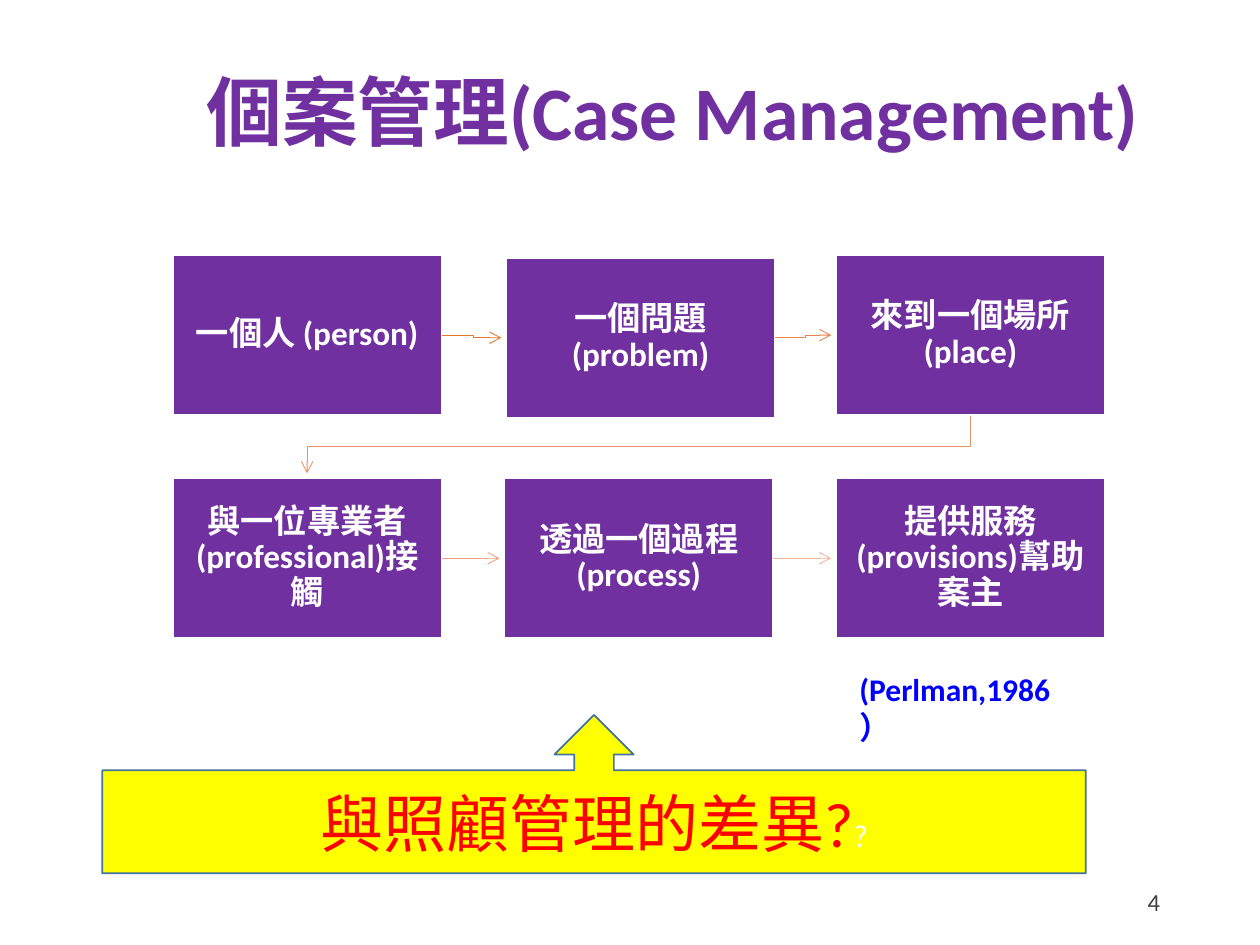
"""Build the case management slide with its six-step flow."""
import pptx
import pptx.dml.color
import pptx.enum.shapes
import pptx.enum.text
import pptx.oxml
import pptx.oxml.ns
import pptx.util

Pt = pptx.util.Pt
Shape = pptx.enum.shapes.MSO_SHAPE
Align = pptx.enum.text.PP_ALIGN
Anchor = pptx.enum.text.MSO_ANCHOR
PURPLE, WHITE = "7030A0", "FFFFFF"
BOX_WIDTH, BOX_HEIGHT, ARROW_GAP = 154, 92, 2.5


def color(hex_text):
    return pptx.dml.color.RGBColor.from_string(hex_text)


def write(shape, text, size=18, hex_color=WHITE, bold=False, align=Align.LEFT,
          anchor=Anchor.TOP, spacing=None, margin=None):
    frame = shape.text_frame
    frame.word_wrap = True
    frame.vertical_anchor = anchor
    if margin is not None:
        frame.margin_left = frame.margin_right = Pt(margin)
        frame.margin_top = frame.margin_bottom = Pt(margin)
    paragraph = frame.paragraphs[0]
    paragraph.alignment = align
    if spacing:
        paragraph.line_spacing = spacing
    run = paragraph.add_run()
    run.text = text
    run.font.name = "Calibri"
    run.font.size = Pt(size)
    run.font.bold = bold
    run.font.color.rgb = color(hex_color)


class SlideBuilder:
    def __init__(self):
        self.presentation = pptx.Presentation()
        self.presentation.slide_width = Pt(720)
        self.presentation.slide_height = Pt(540)
        layout = self.presentation.slide_layouts[6]
        self.slide = self.presentation.slides.add_slide(layout)

    def text(self, text, left, top, width, height, **style):
        shape = self.slide.shapes.add_textbox(Pt(left), Pt(top), Pt(width), Pt(height))
        write(shape, text, **style)

    def shape(self, kind, left, top, width, height, fill, line, line_width):
        shape = self.slide.shapes.add_shape(kind, Pt(left), Pt(top), Pt(width), Pt(height))
        shape.shadow.inherit = False
        shape.fill.solid()
        shape.fill.fore_color.rgb = color(fill)
        shape.line.color.rgb = color(line)
        shape.line.width = Pt(line_width)
        return shape

    def step(self, text, left, top):
        box = self.shape(Shape.RECTANGLE, left, top, BOX_WIDTH, BOX_HEIGHT, PURPLE, WHITE, 1.5)
        write(box, text, size=19, bold=True, align=Align.CENTER, anchor=Anchor.MIDDLE,
              spacing=0.9, margin=10.8)
        return box

    def arrow_line(self, shape, hex_color):
        shape.line.color.rgb = color(hex_color)
        shape.line.width = Pt(0.5)
        tail = pptx.oxml.parse_xml(
            f'<a:tailEnd {pptx.oxml.ns.nsdecls("a")} type="arrow"/>')
        shape.line._get_or_add_ln().append(tail)

    def elbow(self, points, hex_color):
        start, *rest = [(Pt(x), Pt(y)) for x, y in points]
        builder = self.slide.shapes.build_freeform(*start)
        builder.add_line_segments(rest, close=False)
        shape = builder.convert_to_shape()
        shape.shadow.inherit = False
        shape.fill.background()
        self.arrow_line(shape, hex_color)

    def straight(self, source, end_x, y, hex_color):
        connector = self.slide.shapes.add_connector(
            pptx.enum.shapes.MSO_CONNECTOR.STRAIGHT,
            source.left + source.width, Pt(y), Pt(end_x), Pt(y))
        connector.begin_connect(source, 3)
        self.arrow_line(connector, hex_color)
        properties = connector._element.spPr
        properties.append(pptx.oxml.parse_xml(
            f'<a:effectLst {pptx.oxml.ns.nsdecls("a")}/>'))


def main():
    builder = SlideBuilder()
    builder.text("個案管理(Case Management)", 111, 39.5, 590, 90, size=43.2,
                 hex_color=PURPLE, bold=True, spacing=0.9)

    columns = [98.5 + 189.5 * index for index in range(3)]
    upper, lower = 145.5, 273
    steps = [
        ("一個人 (person)", columns[0], upper),
        ("一個問題 (problem)", columns[1] + 1, upper + 1.5),
        ("來到一個場所 (place)", columns[2], upper),
        ("與一位專業者(professional)接觸", columns[0], lower),
        ("透過一個過程(process)", columns[1], lower),
        ("提供服務(provisions)幫助案主", columns[2], lower),
    ]
    boxes = [builder.step(*step) for step in steps]

    for index, hex_color in ((0, "E2772F"), (1, "E78449")):
        (_, left, top), (_, next_left, next_top) = steps[index:index + 2]
        start_x, end_x = left + BOX_WIDTH, next_left - ARROW_GAP
        start_y, end_y = top + BOX_HEIGHT / 2, next_top + BOX_HEIGHT / 2
        bend_x = (left + BOX_WIDTH + next_left) / 2
        builder.elbow([(start_x, start_y), (bend_x, start_y),
                       (bend_x, end_y), (end_x, end_y)], hex_color)

    start_x, end_x = columns[2] + BOX_WIDTH / 2, columns[0] + BOX_WIDTH / 2
    start_y = upper + BOX_HEIGHT
    bend_y = (start_y + lower) / 2
    builder.elbow([(start_x, start_y), (start_x, bend_y),
                   (end_x, bend_y), (end_x, lower - ARROW_GAP)], "EB9264")

    for index, hex_color in ((3, "EFA17F"), (4, "F3B29A")):
        builder.straight(boxes[index], steps[index + 1][1] - ARROW_GAP,
                         lower + BOX_HEIGHT / 2, hex_color)

    builder.text("(Perlman,1986）", 484, 379.5, 140, 29, hex_color="0000FF", bold=True)
    builder.text("4", 508, 500.5, 162, 29, size=14, hex_color="404040",
                 align=Align.RIGHT, anchor=Anchor.MIDDLE)
    callout = builder.shape(Shape.UP_ARROW_CALLOUT, 58.5, 408.5, 562, 90.5,
                            "FFFF00", "43739E", 1)
    for text, size, hex_color in (("與照顧管理的差異?", 36, "FF0000"), ("?", 18, WHITE)):
        write(callout, text, size=size, hex_color=hex_color,
              align=Align.CENTER, anchor=Anchor.MIDDLE)

    builder.presentation.save("out.pptx")


if __name__ == "__main__":
    main()
